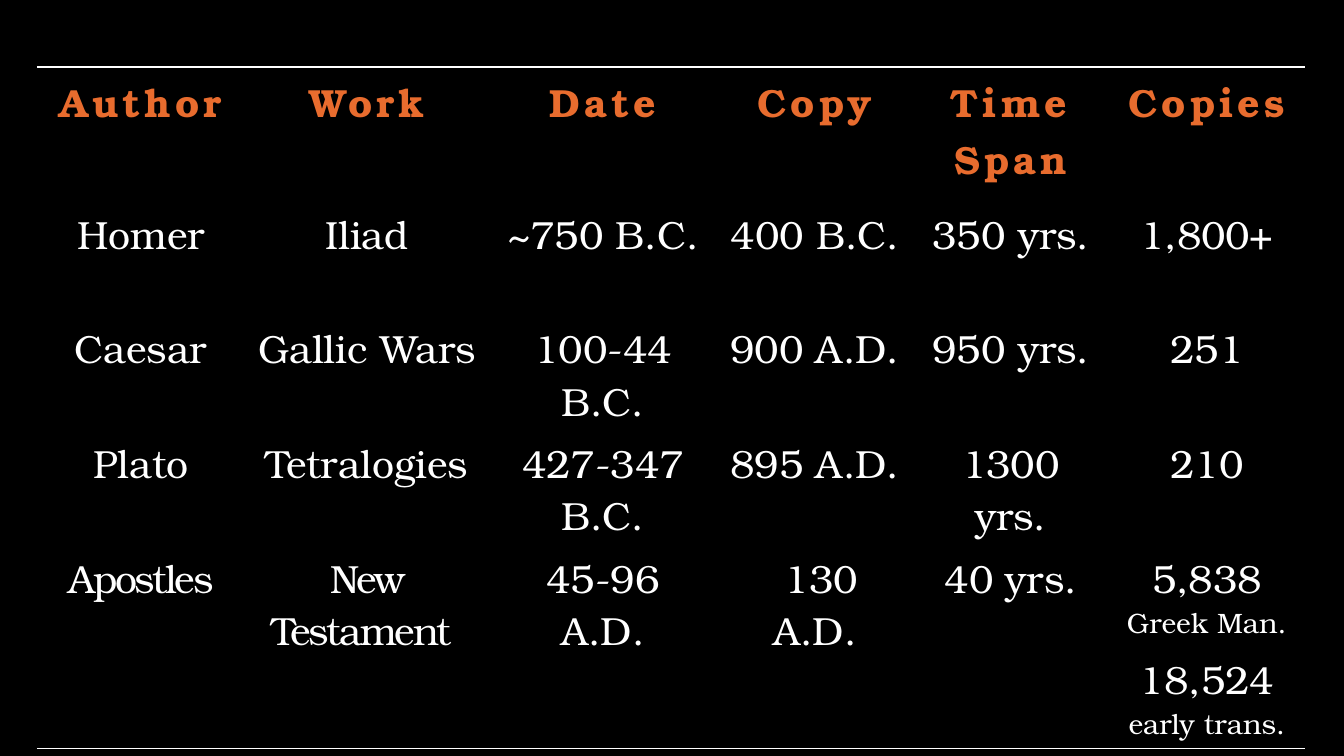
from lxml import etree
from pptx import Presentation, util as u
from pptx.dml import color
from pptx.enum import text
from pptx.oxml import ns

EMU_PER_PX = 914400 / 100.8
FONT = "TeX Gyre Bonum"
BLACK, WHITE, ORANGE = "000000", "FFFFFF", "E86C2E"

COLUMNS = [208, 244, 228, 196, 196, 196]
ROWS = [136, 114, 114, 114, 101, 101]
MANUSCRIPTS = [
    ["Author", "Work", "Date", "Copy", "Time Span", "Copies"],
    ["Homer", "Iliad", "~750 B.C.", "400 B.C.", "350 yrs.", "1,800+"],
    ["Caesar", "Gallic Wars", "100-44 B.C.", "900 A.D.", "950 yrs.", "251"],
    ["Plato", "Tetralogies", "427-347 B.C.", "895 A.D.", "1300 yrs.", "210"],
    ["Apostles", "New Testament ", "45-96 A.D.", " 130 A.D.", "40 yrs."],
]
TESTAMENT_COPIES = [("5,838\v", "Greek Man."), ("18,524 ", "early trans.")]


def px(length):
    return u.Emu(round(length * EMU_PER_PX))


def rgb(value):
    return color.RGBColor.from_string(value)


def add_xml(parent, tag, **attributes):
    return etree.SubElement(parent, ns.qn(tag), attributes)


class SlideBuilder:
    def __init__(self, presentation):
        self.slide = presentation.slides.add_slide(presentation.slide_layouts[6])
        fill = self.slide.background.fill
        fill.solid()
        fill.fore_color.rgb = rgb(BLACK)

    def table(self, left, top, columns, rows):
        frame = self.slide.shapes.add_table(
            len(rows), len(columns), px(left), px(top), px(sum(columns)), px(sum(rows)))
        table = frame.table
        table.first_row = table.horz_banding = False
        for column, width in zip(table.columns, columns):
            column.width = px(width)
        for row, height in zip(table.rows, rows):
            row.height = px(height)
        return table

    def frame_cell(self, cell, ruled_sides):
        """Rule the sides named by letters L, R, T, B and leave the others bare."""
        properties = cell._tc.get_or_add_tcPr()
        for side in "LRTB":
            line = add_xml(properties, f"a:ln{side}", w=str(u.Pt(1)))
            if side in ruled_sides:
                add_xml(add_xml(line, "a:solidFill"), "a:srgbClr", val=WHITE)
            else:
                add_xml(line, "a:noFill")
        cell.fill.background()

    def cell_text(self, cell, runs, ink=WHITE, bold=False, spacing=0):
        """Fill a cell with (text, size) runs; spacing is in hundredths of a point."""
        paragraph = cell.text_frame.paragraphs[0]
        paragraph.alignment = text.PP_ALIGN.CENTER
        before = add_xml(paragraph._p.get_or_add_pPr(), "a:spcBef")
        add_xml(before, "a:spcPct", val="20000")
        for words, size in runs:
            run = paragraph.add_run()
            run.text = words.rstrip("\v")
            font = run.font
            font.name, font.size, font.bold = FONT, u.Pt(size), bold
            font.color.rgb = rgb(ink)
            run._r.get_or_add_rPr().set("spc", str(spacing))
            if words.endswith("\v"):
                paragraph.add_line_break()


def main():
    presentation = Presentation()
    presentation.slide_width, presentation.slide_height = px(1344), px(756)
    builder = SlideBuilder(presentation)
    table = builder.table(37, 67, COLUMNS, ROWS)
    last_row, last_column = len(ROWS) - 1, len(COLUMNS) - 1

    for column in range(last_column):
        table.cell(last_row - 1, column).merge(table.cell(last_row, column))

    for row in range(len(ROWS)):
        for column in range(len(COLUMNS)):
            cell = table.cell(row, column)
            at_bottom = row == last_row or cell.is_merge_origin
            builder.frame_cell(cell, "T" if row == 0 else "B" if at_bottom else "")

    for row, entries in enumerate(MANUSCRIPTS):
        for column, entry in enumerate(entries):
            style = {}
            if row == 0:
                style = dict(ink=ORANGE, bold=True, spacing=300)
            elif row == last_row - 1 and column < 2:
                style = dict(spacing=-150)
            builder.cell_text(table.cell(row, column), [(entry, 28)], **style)

    for row, (count, kind) in enumerate(TESTAMENT_COPIES, last_row - 1):
        builder.cell_text(table.cell(row, last_column), [(count, 28), (kind, 20)])

    presentation.save("out.pptx")


if __name__ == "__main__":
    main()
